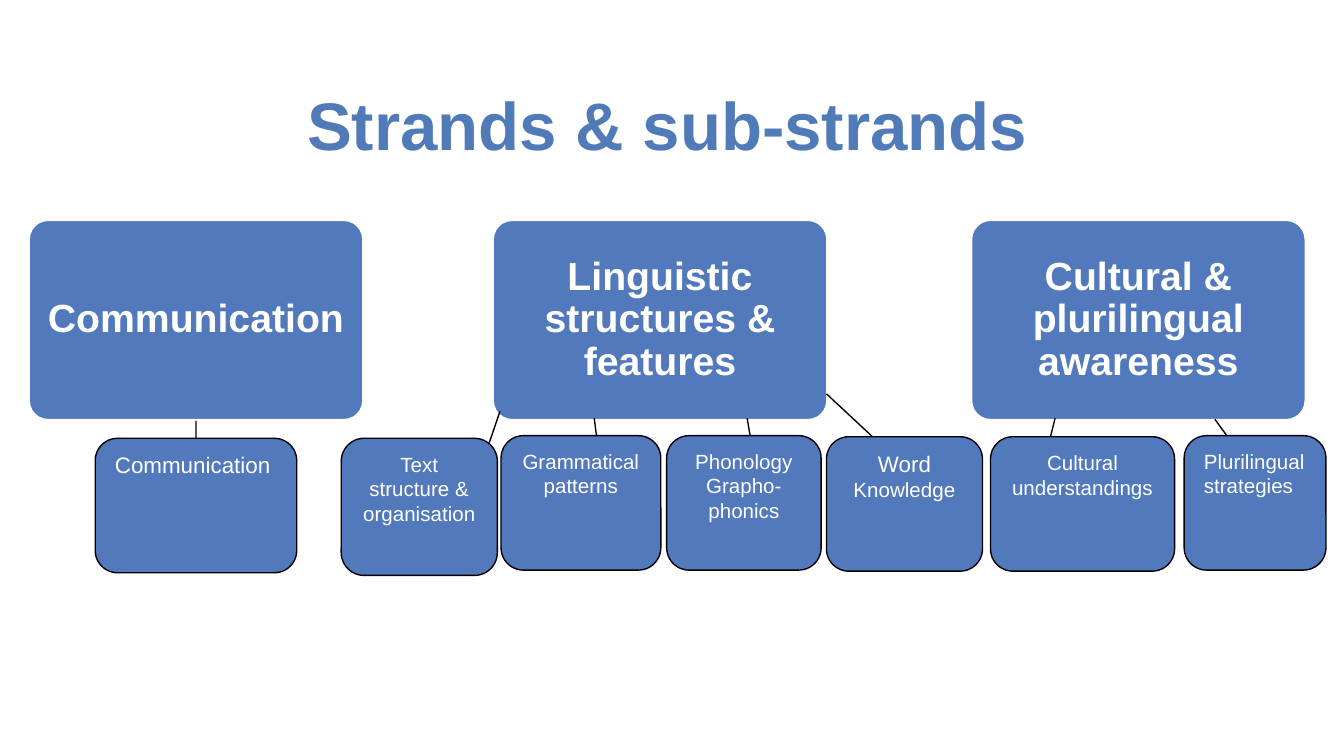
from dataclasses import dataclass

from pptx import Presentation
from pptx.dml.color import RGBColor
from pptx.enum.shapes import MSO_CONNECTOR, MSO_SHAPE
from pptx.enum.text import MSO_ANCHOR, PP_ALIGN
from pptx.oxml.ns import qn
from pptx.shapes.autoshape import Shape
from pptx.shapes.connector import Connector
from pptx.text.text import TextFrame
from pptx.util import Cm, Pt
from lxml import etree

ROUNDED = MSO_SHAPE.ROUNDED_RECTANGLE
STRAIGHT = MSO_CONNECTOR.STRAIGHT
MIDDLE, TOP = MSO_ANCHOR.MIDDLE, MSO_ANCHOR.TOP
CENTER, LEFT = PP_ALIGN.CENTER, PP_ALIGN.LEFT

FONT = "Arial"
TITLE_BLUE, BOX_BLUE = "517AB8", "5179BB"
WHITE, BLACK = "FFFFFF", "000000"
STRAND_TOP, STRAND_WIDTH, STRAND_HEIGHT = 4.14, 6.35, 3.81
BOTTOM_SIDE = 2


@dataclass
class Strand:
    text: str
    left: float


@dataclass
class SubStrand:
    """Each line is (text, size); a newline inside it is a line break."""
    lines: list[tuple[str, float]]
    left: float
    top: float
    width: float
    height: float = 2.54
    align: PP_ALIGN = CENTER


@dataclass
class Arrow:
    x1: float
    y1: float
    x2: float
    y2: float


STRANDS = [
    Strand("Communication", 0.53),
    Strand("Linguistic structures & features", 9.3),
    Strand("Cultural & plurilingual awareness", 18.34),
]
SUB_STRANDS = [
    SubStrand([("Communication", 12)], 1.8, 8.28, 3.81, align=LEFT),
    SubStrand([("Text structure & organisation", 11)], 6.45, 8.28, 2.95, 2.59),
    SubStrand([("Grammatical", 11), ("patterns", 11)], 9.47, 8.23, 3.02),
    SubStrand([("Phonology", 11), ("Grapho-", 11), ("phonics", 11)], 12.6, 8.23, 2.92),
    SubStrand([("Word", 12), ("Knowledge", 11)], 15.62, 8.25, 2.95),
    SubStrand([("Cultural", 11), ("understandings", 11)], 18.72, 8.25, 3.48),
    SubStrand([("Plurilingual\nstrategies", 11)], 22.38, 8.23, 2.68, align=LEFT),
]
COMMUNICATION_ARROW = Arrow(3.7, 7.95, 3.7, 9.14)
OTHER_ARROWS = [
    Arrow(9.45, 7.77, 9.04, 8.97),
    Arrow(11.23, 7.9, 11.33, 8.66),
    Arrow(14.12, 7.9, 14.25, 8.66),
    Arrow(15.62, 7.44, 16.79, 8.53),
    Arrow(19.94, 7.9, 19.63, 9.14),
    Arrow(22.96, 7.92, 23.5, 8.66),
]


def color(hex_value: str) -> RGBColor:
    return RGBColor.from_string(hex_value)


def write(frame: TextFrame, lines: list[tuple[str, float]], hex_color: str,
          align: PP_ALIGN, anchor: MSO_ANCHOR, bold: bool = False) -> None:
    frame.word_wrap = True
    frame.vertical_anchor = anchor
    for index, (text, size) in enumerate(lines):
        paragraph = frame.add_paragraph() if index else frame.paragraphs[0]
        paragraph.alignment = align
        for part_index, part in enumerate(text.split("\n")):
            if part_index:
                paragraph.add_line_break()
            run = paragraph.add_run()
            run.text = part
            run.font.name = FONT
            run.font.size = Pt(size)
            run.font.bold = bold
            run.font.color.rgb = color(hex_color)


def add_box(shapes, left: float, top: float, width: float, height: float,
            line_color: str, line_width: float) -> Shape:
    box = shapes.add_shape(ROUNDED, Cm(left), Cm(top), Cm(width), Cm(height))
    box.shadow.inherit = False
    box.fill.solid()
    box.fill.fore_color.rgb = color(BOX_BLUE)
    box.line.color.rgb = color(line_color)
    box.line.width = Pt(line_width)
    return box


def add_strand(shapes, strand: Strand) -> Shape:
    box = add_box(shapes, strand.left, STRAND_TOP, STRAND_WIDTH, STRAND_HEIGHT, WHITE, 2)
    box.adjustments[0] = 0.1
    frame = box.text_frame
    frame.margin_left = frame.margin_right = Cm(0.23)
    write(frame, [(strand.text, 21)], WHITE, CENTER, MIDDLE, bold=True)
    frame.paragraphs[0].line_spacing = 0.9
    return box


def add_sub_strand(shapes, sub: SubStrand) -> None:
    box = add_box(shapes, sub.left, sub.top, sub.width, sub.height, BLACK, 0.75)
    write(box.text_frame, sub.lines, WHITE, sub.align, TOP)


def add_arrow(shapes, arrow: Arrow) -> Connector:
    connector = shapes.add_connector(
        STRAIGHT, Cm(arrow.x1), Cm(arrow.y1), Cm(arrow.x2), Cm(arrow.y2))
    connector.line.color.rgb = color(BLACK)
    connector.line.width = Pt(0.75)
    etree.SubElement(connector.line._get_or_add_ln(), qn("a:tailEnd"), type="triangle")
    etree.SubElement(connector._element.spPr, qn("a:effectLst"))
    return connector


def main() -> None:
    presentation = Presentation()
    presentation.slide_width, presentation.slide_height = Cm(25.4), Cm(14.28)
    shapes = presentation.slides.add_slide(presentation.slide_layouts[6]).shapes

    title = shapes.add_textbox(Cm(0.51), Cm(1.14), Cm(24.21), Cm(2.39))
    write(title.text_frame, [("Strands & sub-strands", 36)], TITLE_BLUE,
          CENTER, MIDDLE, bold=True)

    communication, *_ = [add_strand(shapes, strand) for strand in STRANDS]
    add_arrow(shapes, COMMUNICATION_ARROW).begin_connect(communication, BOTTOM_SIDE)
    for arrow in OTHER_ARROWS:
        add_arrow(shapes, arrow)
    for sub in SUB_STRANDS:
        add_sub_strand(shapes, sub)

    presentation.save("out.pptx")


if __name__ == "__main__":
    main()
